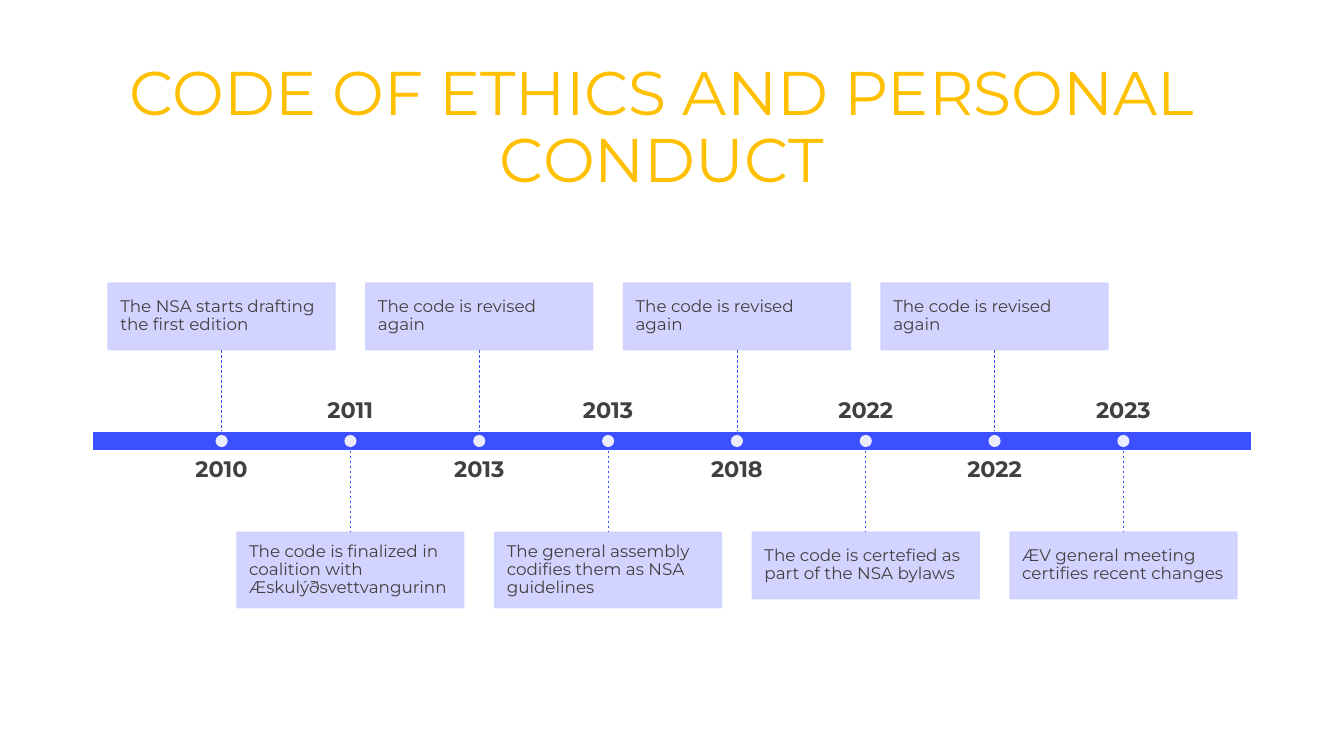
from lxml import etree
from pptx import Presentation
from pptx import util as u
from pptx.dml.color import RGBColor
from pptx.enum import dml, shapes, text
from pptx.oxml.ns import qn

FONT = "Montserrat"
BLUE, LILAC, WHITE, GREY, GOLD = "3C50FF", "CED0FF", "FFFFFF", "404041", "FFC000"
BAR_LEFT, BAR_TOP, BAR_WIDTH, BAR_HEIGHT = 0.92, 4.28, 11.5, 0.19
BAR_BOTTOM = BAR_TOP + BAR_HEIGHT
STEM, CARD_WIDTH, DOT = 0.81, 2.25, 0.12
YEAR_WIDTH, YEAR_HEIGHT, YEAR_GAP = 2.04, 0.54, 0.08
EVENTS = [
    ("2010", "The NSA starts drafting the first edition", 0.66),
    ("2011", "The code is finalized in coalition with Æskulýðsvettvangurinn", 0.75),
    ("2013", "The code is revised again", 0.66),
    ("2013", "The general assembly codifies them as NSA guidelines", 0.75),
    ("2018", "The code is revised again", 0.66),
    ("2022", "The code is certefied as part of the NSA bylaws", 0.66),
    ("2022", "The code is revised again", 0.66),
    ("2023", "ÆV general meeting certifies recent changes", 0.66),
]


def paint(color_format, color):
    """Give a fill or line format a solid colour."""
    color_format.solid()
    color_format.fore_color.rgb = RGBColor.from_string(color)


def set_opacity(shape, percent):
    """Make every colour of a shape's fill and line partly transparent."""
    for color in shape._element.spPr.iter(qn("a:srgbClr")):
        etree.SubElement(color, qn("a:alpha")).set("val", str(percent * 1000))


def add_block(page, kind, left, top, width, height, fill, line=None):
    """Add a filled preset shape with an optional outline."""
    block = page.shapes.add_shape(
        kind, u.Inches(left), u.Inches(top), u.Inches(width), u.Inches(height))
    block.shadow.inherit = False
    paint(block.fill, fill)
    if line:
        paint(block.line.fill, line)
        block.line.width = u.Pt(1)
    else:
        block.line.fill.background()
    return block


def write(box, words, size, color, align, anchor, inset, bold=False):
    """Put one formatted paragraph in a box."""
    frame = box.text_frame
    frame.text = words
    frame.word_wrap = True
    frame.vertical_anchor = anchor
    frame.margin_left = frame.margin_right = u.Inches(inset)
    frame.margin_top = frame.margin_bottom = u.Inches(inset)
    para = frame.paragraphs[0]
    para.alignment = align
    para.line_spacing = 0.9
    for span in para.runs:
        span.font.name = FONT
        span.font.size = u.Pt(size)
        span.font.bold = bold
        span.font.color.rgb = RGBColor.from_string(color)


def add_label(page, left, top, width, height, words, size, color, anchor, inset=0, bold=False):
    """Add a centred text box."""
    box = page.shapes.add_textbox(
        u.Inches(left), u.Inches(top), u.Inches(width), u.Inches(height))
    write(box, words, size, color, text.PP_ALIGN.CENTER, anchor, inset, bold)


def add_stem(page, x, top):
    """Add a dashed vertical line between the bar and a card."""
    stem = page.shapes.add_connector(
        shapes.MSO_CONNECTOR.STRAIGHT,
        u.Inches(x), u.Inches(top), u.Inches(x), u.Inches(top + STEM))
    paint(stem.line.fill, BLUE)
    stem.line.width = u.Pt(0.5)
    stem.line.dash_style = dml.MSO_LINE.DASH
    etree.SubElement(stem._element.spPr, qn("a:effectLst"))


def add_event(page, x, above, year, words, height):
    """Add one event: its card, stem, year and dot."""
    if above:
        card_top, stem_top = BAR_TOP - STEM - height, BAR_TOP - STEM
        year_top, anchor = BAR_BOTTOM + YEAR_GAP, text.MSO_ANCHOR.TOP
    else:
        card_top, stem_top = BAR_BOTTOM + STEM, BAR_BOTTOM
        year_top, anchor = BAR_TOP - YEAR_GAP - YEAR_HEIGHT, text.MSO_ANCHOR.BOTTOM
    card = add_block(page, shapes.MSO_SHAPE.RECTANGLE, x - CARD_WIDTH / 2, card_top,
                     CARD_WIDTH, height, LILAC, LILAC)
    set_opacity(card, 90)
    write(card, words, 12, GREY, text.PP_ALIGN.LEFT, text.MSO_ANCHOR.MIDDLE, 0.12)
    add_stem(page, x, stem_top)
    add_label(page, x - YEAR_WIDTH / 2, year_top, YEAR_WIDTH, YEAR_HEIGHT,
              year, 16, GREY, anchor, bold=True)
    dot = add_block(page, shapes.MSO_SHAPE.OVAL, x - DOT / 2,
                    BAR_TOP + (BAR_HEIGHT - DOT) / 2, DOT, DOT, WHITE)
    set_opacity(dot, 90)


def main():
    """Build the timeline slide."""
    deck = Presentation()
    deck.slide_width, deck.slide_height = u.Inches(13.33), u.Inches(7.5)
    page = deck.slides.add_slide(deck.slide_layouts[6])
    add_label(page, 1.14, 0.4, 10.85, 1.76, "CODE OF ETHICS AND PERSONAL CONDUCT",
              44, GOLD, text.MSO_ANCHOR.MIDDLE, inset=0.1)
    add_block(page, shapes.MSO_SHAPE.RECTANGLE, BAR_LEFT, BAR_TOP,
              BAR_WIDTH, BAR_HEIGHT, BLUE, WHITE)
    step = BAR_WIDTH / (len(EVENTS) + 1)
    for index, event in enumerate(EVENTS):
        add_event(page, BAR_LEFT + step * (index + 1), index % 2 == 0, *event)
    deck.save("out.pptx")


if __name__ == "__main__":
    main()
